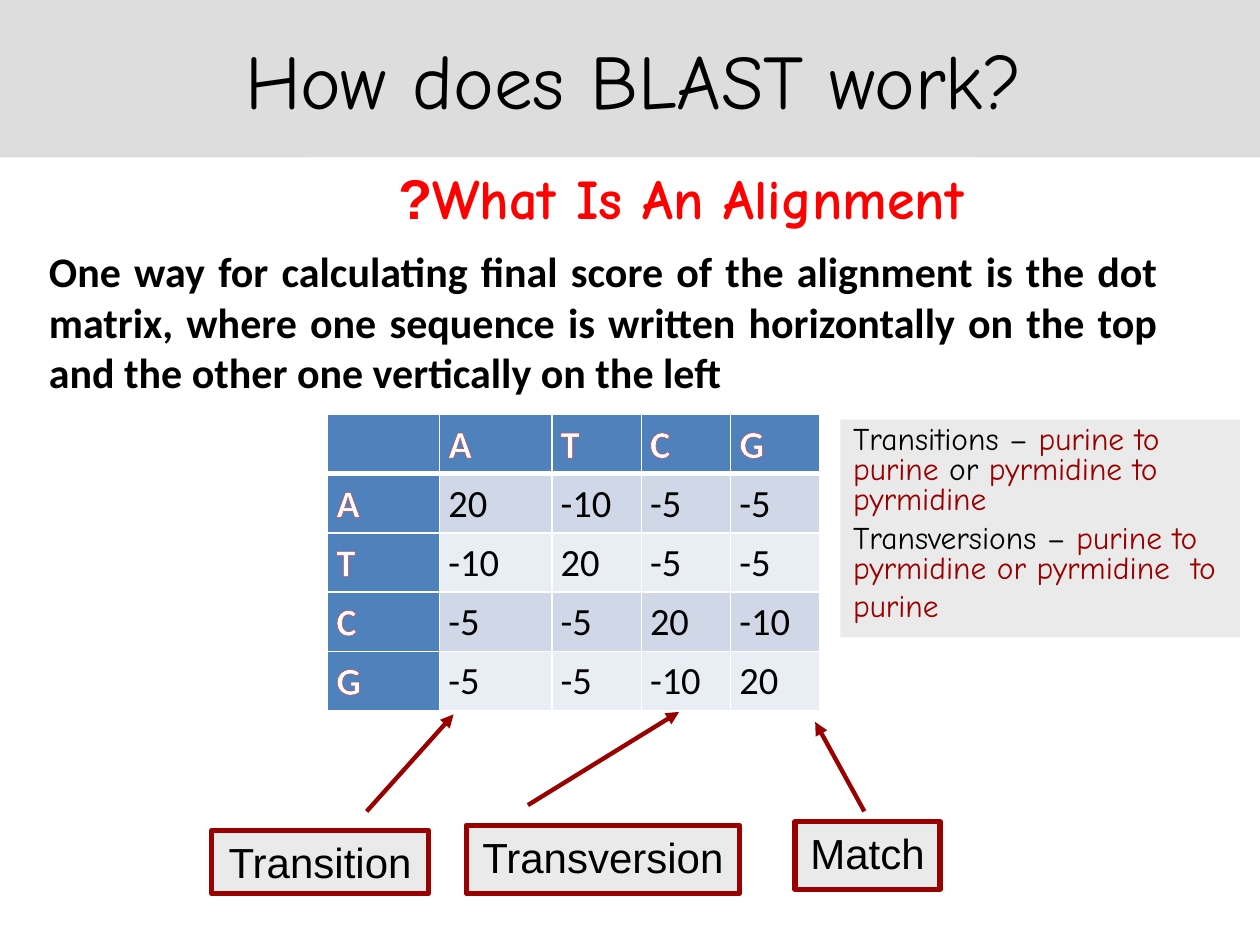
import pptx
import pptx.util
import pptx.oxml
import pptx.oxml.ns
import pptx.dml.color
import pptx.enum.shapes
import pptx.enum.text

Inches = pptx.util.Inches
Pt = pptx.util.Pt
ALIGN = pptx.enum.text.PP_ALIGN
ANCHOR = pptx.enum.text.MSO_ANCHOR
NAMESPACE = pptx.oxml.ns.nsdecls("a")


def color(hex_string):
    return pptx.dml.color.RGBColor.from_string(hex_string)


def add_run(paragraph, text, hex_string, **font_format):
    run = paragraph.add_run()
    run.text = text
    run.font.color.rgb = color(hex_string)
    for name, value in font_format.items():
        setattr(run.font, name, value)
    return run


presentation = pptx.Presentation()
presentation.slide_width = Inches(10)
presentation.slide_height = Inches(7.5)
slide = presentation.slides.add_slide(presentation.slide_layouts[1])
title, definitions = slide.shapes.title, slide.placeholders[1]

placeholders = [
    (title, (0, 0, 10.06, 1.25), "DDDDDD", ANCHOR.MIDDLE),
    (definitions, (6.67, 3.33, 3.17, 1.73), "EAEAEA", ANCHOR.TOP),
]
for shape, box, fill, anchor in placeholders:
    shape.left, shape.top, shape.width, shape.height = map(Inches, box)
    shape.fill.solid()
    shape.fill.fore_color.rgb = color(fill)
    frame_format = {
        "auto_size": pptx.enum.text.MSO_AUTO_SIZE.NONE,
        "vertical_anchor": anchor,
        "word_wrap": True,
    }
    for name, value in frame_format.items():
        setattr(shape.text_frame, name, value)

paragraph = title.text_frame.paragraphs[0]
paragraph.alignment = ALIGN.CENTER
add_run(paragraph, "How does BLAST work?", "000000", size=Pt(44), name="Comic Neue")

definition_runs = [
    [("Transitions – ", "000000", 18), ("purine to purine", "990000", 18),
     (" or ", "000000", 18), ("pyrmidine to pyrmidine", "990000", 18)],
    [("Transversions – ", "000000", 18),
     ("purine to pyrmidine or pyrmidine  to purine", "990000", 18),
     (" ", "000000", 24)],
]
frame = definitions.text_frame
for index, runs in enumerate(definition_runs):
    paragraph = frame.add_paragraph() if index else frame.paragraphs[0]
    paragraph.line_spacing = 0.8
    properties = paragraph._p.get_or_add_pPr()
    properties.set("marL", "0")
    properties.set("indent", "0")
    properties.append(pptx.oxml.parse_xml(f"<a:buNone {NAMESPACE}/>"))
    for text, hex_string, size in runs:
        add_run(paragraph, text, hex_string, size=Pt(size), name="Comic Neue")

subtitle = slide.shapes.add_textbox(Inches(2.45), Inches(1.25), Inches(5.3), Inches(0.63))
subtitle.fill.solid()
subtitle.fill.fore_color.rgb = color("FFFFFF")
subtitle.text_frame.word_wrap = True
paragraph = subtitle.text_frame.paragraphs[0]
paragraph.alignment = ALIGN.RIGHT
paragraph._p.get_or_add_pPr().set("rtl", "1")
run = add_run(paragraph, "What Is An Alignment?", "FF0000",
              size=Pt(32), name="Comic Neue", bold=True)
run.font._element.append(pptx.oxml.parse_xml(f'<a:cs {NAMESPACE} typeface="Arial"/>'))

explanation = slide.shapes.add_textbox(Inches(0.29), Inches(1.9), Inches(9), Inches(1.31))
explanation.text_frame.word_wrap = True
paragraph = explanation.text_frame.paragraphs[0]
paragraph.alignment = ALIGN.JUSTIFY
add_run(paragraph,
        "One way for calculating final score of the alignment is the dot matrix, "
        "where one sequence is written horizontally on the top and the other one "
        "vertically on the left",
        "000000", size=Pt(24), name="Calibri", bold=True)

scores = [
    ["", "A", "T", "C", "G"],
    ["A", "20", "-10", "-5", "-5"],
    ["T", "-10", "20", "-5", "-5"],
    ["C", "-5", "-5", "20", "-10"],
    ["G", "-5", "-5", "-10", "20"],
]
table = slide.shapes.add_table(
    5, 5, Inches(2.6), Inches(3.29), Inches(3.91), Inches(2.35)).table
for column, width in zip(table.columns, [0.89, 0.89, 0.71, 0.71, 0.71]):
    column.width = Inches(width)
for row in table.rows:
    row.height = Inches(0.47)
cell_format = {
    "margin_left": Inches(0.07),
    "margin_right": Inches(0.07),
    "margin_top": 0,
    "margin_bottom": 0,
}
for row_index, values in enumerate(scores):
    for column_index, text in enumerate(values):
        cell = table.cell(row_index, column_index)
        for name, value in cell_format.items():
            setattr(cell, name, value)
        is_label = row_index == 0 or column_index == 0
        for side in "LRTB":
            header_edge = (row_index, side) in [(0, "B"), (1, "T")]
            width = Pt(3 if header_edge else 1)
            cell._tc.get_or_add_tcPr().append(pptx.oxml.parse_xml(
                f'<a:ln{side} {NAMESPACE} w="{width}"><a:solidFill>'
                f'<a:srgbClr val="FFFFFF"/></a:solidFill></a:ln{side}>'))
        band = "D0D8E8" if row_index % 2 else "E9EDF4"
        cell.fill.solid()
        cell.fill.fore_color.rgb = color("4F81BD" if is_label else band)
        paragraph = cell.text_frame.paragraphs[0]
        paragraph.alignment = ALIGN.JUSTIFY
        paragraph.line_spacing = 1.15
        if not text:
            continue
        run = add_run(paragraph, text, "FFFFFF" if is_label else "000000",
                      size=Pt(22), name="Calibri", bold=is_label)
        if is_label or row_index == column_index:
            run.font._element.insert(0, pptx.oxml.parse_xml(
                f'<a:ln {NAMESPACE} w="{Pt(0.71)}"><a:solidFill>'
                '<a:srgbClr val="D73A36"/></a:solidFill></a:ln>'))

callouts = [
    ("Match", (6.31, 6.52, 1.15, 0.54), (6.86, 6.44, 6.47, 5.73)),
    ("Transition", (1.68, 6.59, 1.72, 0.5), (2.91, 6.44, 3.6, 5.67)),
    ("Transversion", (3.7, 6.55, 2.17, 0.54), (4.19, 6.39, 5.39, 5.65)),
]
for text, box, ends in callouts:
    arrow = slide.shapes.add_connector(
        pptx.enum.shapes.MSO_CONNECTOR.STRAIGHT, *map(Inches, ends))
    arrow.line.color.rgb = color("990000")
    arrow.line.width = Pt(2.5)
    arrow.line._get_or_add_ln().append(
        pptx.oxml.parse_xml(f'<a:tailEnd {NAMESPACE} type="triangle"/>'))
    arrow._element.spPr.append(pptx.oxml.parse_xml(f"<a:effectLst {NAMESPACE}/>"))

    label = slide.shapes.add_shape(
        pptx.enum.shapes.MSO_SHAPE.RECTANGLE, *map(Inches, box))
    label.shadow.inherit = False
    label.fill.solid()
    label.fill.fore_color.rgb = color("EAEAEA")
    label.line.color.rgb = color("990000")
    label.line.width = Pt(3)
    label.text_frame.word_wrap = False
    label.text_frame.vertical_anchor = ANCHOR.TOP
    paragraph = label.text_frame.paragraphs[0]
    paragraph.alignment = ALIGN.CENTER
    add_run(paragraph, text, "000000", size=Pt(24), name="Arial")

presentation.save("out.pptx")
